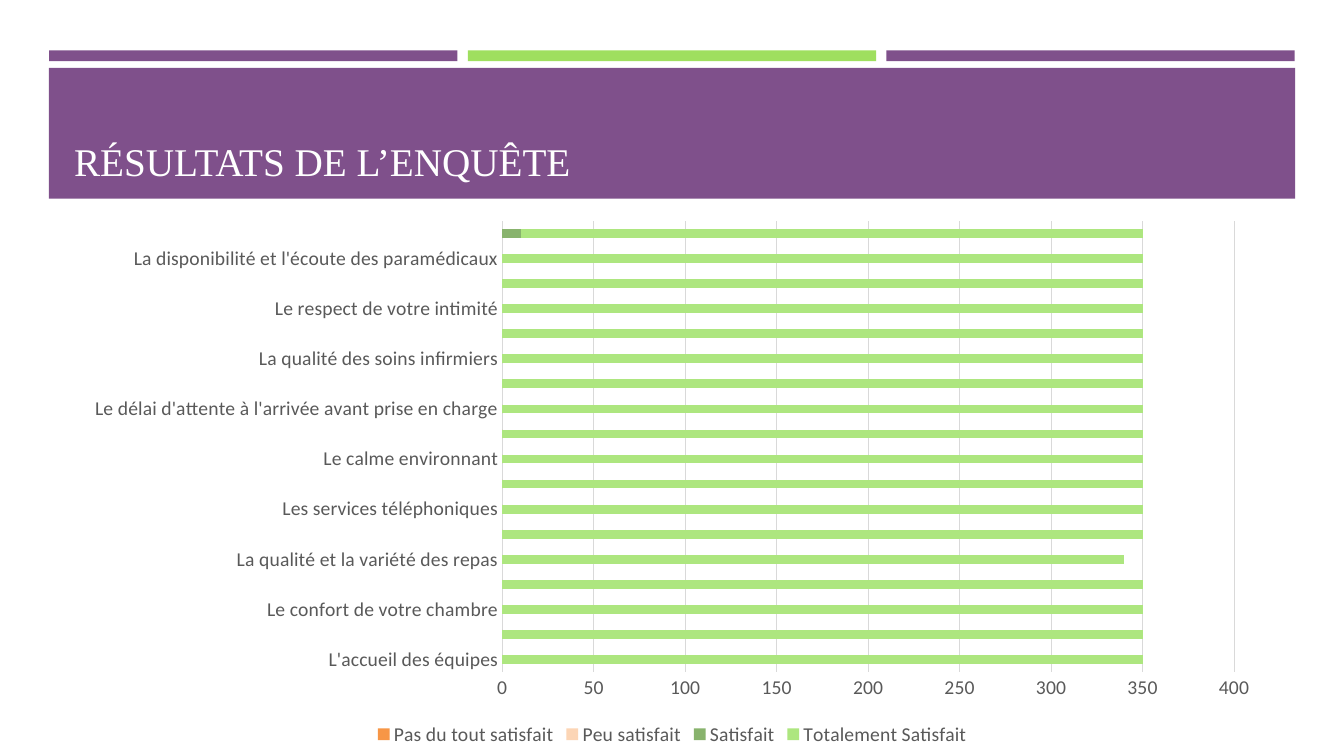
from pptx import Presentation
from pptx import util as u
from pptx.chart import data as chart_data
from pptx.dml import color
from pptx.enum import chart as ch, shapes, text

COLORS = {
    "purple": "7F508B",
    "green": "9FDF5F",
    "white": "FFFFFF",
    "label": "595959",
    "grid": "D9D9D9",
}
RATINGS = {
    "Pas du tout satisfait": "F79646",
    "Peu satisfait": "FCD5B5",
    "Satisfait": "88B36D",
    "Totalement Satisfait": "ADE67F",
}
ANSWERS = [
    ("L'accueil des équipes", 0, 0, 0, 350),
    ("La propreté de votre chambre", 0, 0, 0, 350),
    ("Le confort de votre chambre", 0, 0, 0, 350),
    ("La qualité du linge fourni", 0, 0, 0, 350),
    ("La qualité et la variété des repas", 0, 0, 0, 340),
    ("La quantité des repas", 0, 0, 0, 350),
    ("Les services téléphoniques", 0, 0, 0, 350),
    ("Les services de télévision", 0, 0, 0, 350),
    ("Le calme environnant", 0, 0, 0, 350),
    ("Les conditions de visite des proches", 0, 0, 0, 350),
    ("Le délai d'attente à l'arrivée avant prise en charge", 0, 0, 0, 350),
    ("La qualité de la prise en charge par le praticien", 0, 0, 0, 350),
    ("La qualité des soins infirmiers", 0, 0, 0, 350),
    ("La prise en charge de la douleur", 0, 0, 0, 350),
    ("Le respect de votre intimité", 0, None, None, 350),
    ("La disponibilité et l'écoute du médecin", 0, 0, 0, 350),
    ("La disponibilité et l'écoute des paramédicaux", 0, 0, 0, 350),
    ("La qualité de votre séjour", 0, 0, 10, 340),
]


def rgb(value):
    return color.RGBColor.from_string(value)


class SurveySlide:
    def __init__(self, slide):
        self.slide = slide
        self.title_font = "Times New Roman"
        self.chart_font = "Calibri"

    def box(self, left, top, width, height):
        return [u.Cm(length) for length in (left, top, width, height)]

    def set_font(self, font, name, size, ink):
        font.name = name
        font.size = u.Pt(size)
        font.color.rgb = rgb(ink)

    def band(self, place, fill):
        band = self.slide.shapes.add_shape(shapes.MSO_SHAPE.RECTANGLE, *self.box(*place))
        band.shadow.inherit = False
        band.fill.solid()
        band.fill.fore_color.rgb = rgb(COLORS[fill])
        band.line.fill.background()

    def title(self, place, wording):
        frame = self.slide.shapes.add_textbox(*self.box(*place)).text_frame
        frame.word_wrap = True
        frame.vertical_anchor = text.MSO_ANCHOR.BOTTOM
        heading = frame.paragraphs[0]
        heading.text = wording
        self.set_font(heading.font, self.title_font, 28, COLORS["white"])

    def style_axis(self, axis):
        axis.major_tick_mark = axis.minor_tick_mark = ch.XL_TICK_MARK.NONE
        self.set_font(axis.tick_labels.font, self.chart_font, 14, COLORS["label"])

    def grey_line(self, line):
        line.color.rgb = rgb(COLORS["grid"])
        line.width = u.Pt(0.75)

    def stacked_bars(self, place, answers, ratings):
        questions, *counts = zip(*answers)
        survey = chart_data.CategoryChartData()
        survey.categories = questions
        for rating, values in zip(ratings, counts):
            survey.add_series(rating, values)
        chart = self.slide.shapes.add_chart(
            ch.XL_CHART_TYPE.BAR_STACKED, *self.box(*place), survey
        ).chart
        self.set_font(chart.font, self.chart_font, 14, COLORS["label"])
        chart.has_title = False

        bars = chart.plots[0]
        bars.vary_by_categories = False
        bars.gap_width = 182
        bars.overlap = 100
        for series, fill in zip(bars.series, ratings.values()):
            series.invert_if_negative = False
            series.format.fill.solid()
            series.format.fill.fore_color.rgb = rgb(fill)

        question_axis, count_axis = chart.category_axis, chart.value_axis
        self.style_axis(question_axis)
        self.grey_line(question_axis.format.line)
        self.style_axis(count_axis)
        count_axis.minimum_scale = 0
        count_axis.maximum_scale = 400
        count_axis.major_unit = 50
        count_axis.format.line.fill.background()
        self.grey_line(count_axis.major_gridlines.format.line)

        chart.has_legend = True
        chart.legend.position = ch.XL_LEGEND_POSITION.BOTTOM
        chart.legend.include_in_layout = False
        self.set_font(chart.legend.font, self.chart_font, 14, COLORS["label"])


def main():
    deck = Presentation()
    deck.slide_width = u.Cm(33.87)
    deck.slide_height = u.Cm(19.05)
    page = SurveySlide(deck.slides.add_slide(deck.slide_layouts[6]))

    for column, fill in enumerate(("purple", "green", "purple")):
        page.band((1.24 + 10.55 * column, 1.27, 10.29, 0.27), fill)
    page.band((1.23, 1.71, 31.41, 3.3), "purple")
    page.title((1.62, 1.96, 30.63, 2.82), "RÉSULTATS DE L’ENQUÊTE")
    page.stacked_bars((1.79, 5.3, 30.3, 13.61), ANSWERS, RATINGS)

    deck.save("out.pptx")


if __name__ == "__main__":
    main()
